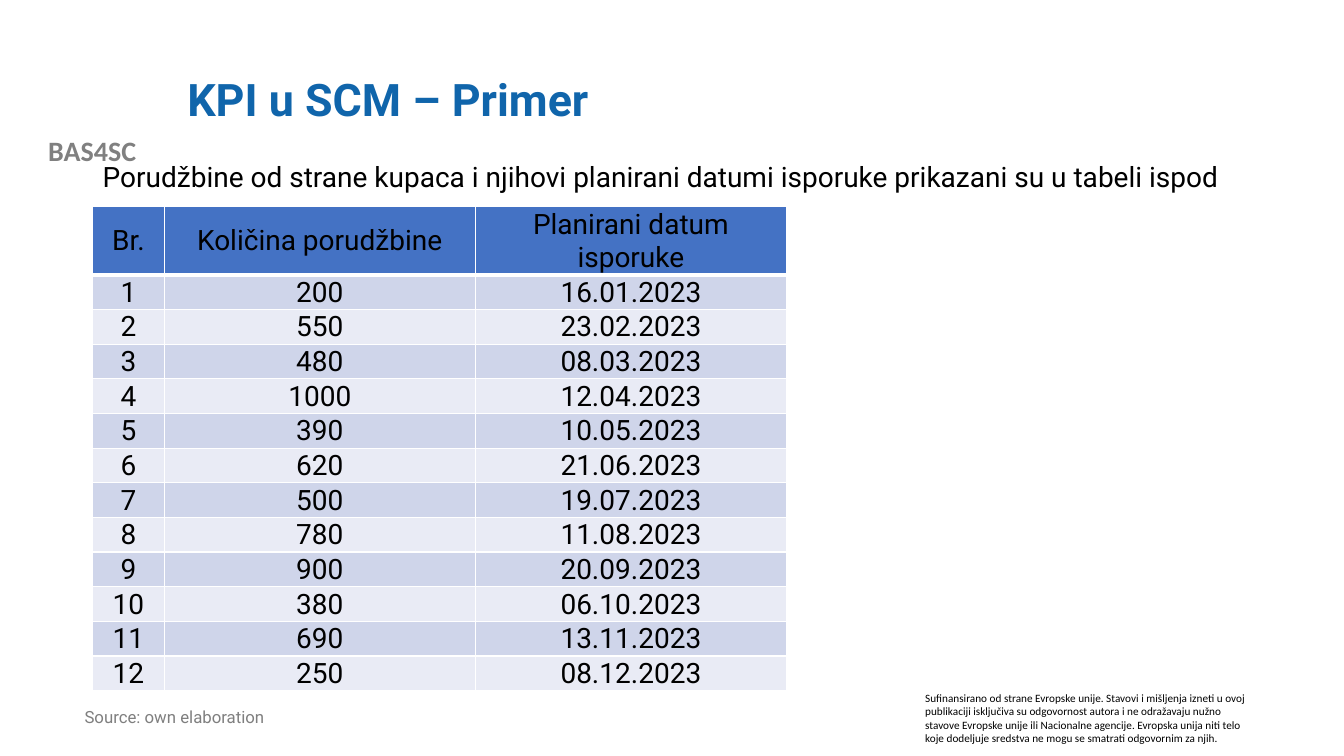
from lxml import etree
from pptx import Presentation
from pptx import util as u
from pptx.dml.color import RGBColor
from pptx.enum import text as t
from pptx.oxml import ns

# The slide is a grid of 160 columns and 90 rows of square units.
COLUMNS, ROWS = 160, 90
UNIT = u.Inches(1 / 12)

BLACK = RGBColor(0x00, 0x00, 0x00)
WHITE = RGBColor(0xFF, 0xFF, 0xFF)
TITLE_BLUE = RGBColor(0x10, 0x65, 0xAB)
LABEL_GREY = RGBColor(0x80, 0x80, 0x80)
SOURCE_GREY = RGBColor(0x7F, 0x7F, 0x7F)
HEADER_BLUE = RGBColor(0x44, 0x72, 0xC4)
BANDS = [RGBColor(0xCF, 0xD5, 0xEA), RGBColor(0xE9, 0xEB, 0xF5)]

PROJECT = "BAS4SC"
DISCLAIMER = (
    "Sufinansirano od strane Evropske unije. Stavovi i mišljenja izneti u ovoj "
    "publikaciji isključiva su odgovornost autora i ne odražavaju nužno stavove "
    "Evropske unije ili Nacionalne agencije. Evropska unija niti telo koje "
    "dodeljuje sredstva ne mogu se smatrati odgovornim za njih."
)
TITLE = "KPI u SCM – Primer"
INTRO = ("Porudžbine od strane kupaca i njihovi planirani datumi isporuke "
         "prikazani su u tabeli ispod")
SOURCE = "Source: own elaboration"
HEADER = ("Br.", "Količina porudžbine", "Planirani datum isporuke")
ORDERS = [
    (200, "16.01.2023"), (550, "23.02.2023"), (480, "08.03.2023"),
    (1000, "12.04.2023"), (390, "10.05.2023"), (620, "21.06.2023"),
    (500, "19.07.2023"), (780, "11.08.2023"), (900, "20.09.2023"),
    (380, "06.10.2023"), (690, "13.11.2023"), (250, "08.12.2023"),
]
COLUMN_WEIGHTS = (0.71, 3.09, 3.09)


def grid(*cells):
    """Turn grid units into slide lengths."""
    return [round(cell * UNIT) for cell in cells]


def set_attributes(target, **values):
    for name, value in values.items():
        setattr(target, name, value)


def format_font(font, size, color, name="Roboto", bold=False):
    set_attributes(font, size=u.Pt(size), name=name, bold=bold)
    font.color.rgb = color


def add_text(slide, box, words, font, frame_format=None, **paragraph_format):
    frame = slide.shapes.add_textbox(*grid(*box)).text_frame
    set_attributes(frame, word_wrap=True, **(frame_format or {}))
    paragraph = frame.paragraphs[0]
    paragraph.text = words
    set_attributes(paragraph, **paragraph_format)
    format_font(paragraph.runs[0].font, **font)


def add_borders(cell, **widths):
    """Draw white borders; widths are points by side, in the order L, R, T, B."""
    properties = cell._tc.get_or_add_tcPr()
    for side, width in widths.items():
        line = etree.SubElement(properties, ns.qn(f"a:ln{side}"), w=str(u.Pt(width)))
        fill = etree.SubElement(line, ns.qn("a:solidFill"))
        etree.SubElement(fill, ns.qn("a:srgbClr"), val=str(WHITE))


def add_orders_table(slide, box):
    rows = [HEADER] + [(number, *order) for number, order in enumerate(ORDERS, 1)]
    left, top, width, height = grid(*box)
    table = slide.shapes.add_table(
        len(rows), len(HEADER), left, top, width, height).table
    for column, weight in zip(table.columns, COLUMN_WEIGHTS):
        column.width = round(width * weight / sum(COLUMN_WEIGHTS))
    for row_index, row in enumerate(rows):
        fill = BANDS[(row_index - 1) % 2] if row_index else HEADER_BLUE
        for column_index, value in enumerate(row):
            cell = table.cell(row_index, column_index)
            add_borders(cell, L=1, R=1, T=3 if row_index == 1 else 1,
                        B=3 if row_index == 0 else 1)
            cell.fill.solid()
            cell.fill.fore_color.rgb = fill
            inset = u.Inches(0.01)
            set_attributes(cell, text=str(value), margin_left=inset,
                           margin_right=inset, margin_top=inset, margin_bottom=0,
                           vertical_anchor=t.MSO_ANCHOR.MIDDLE)
            paragraph = cell.text_frame.paragraphs[0]
            paragraph.alignment = t.PP_ALIGN.CENTER
            format_font(paragraph.runs[0].font, 20, BLACK)


def add_project_marks(slide, label_box, disclaimer_box):
    growing = {"auto_size": t.MSO_AUTO_SIZE.SHAPE_TO_FIT_TEXT}
    add_text(slide, label_box, PROJECT,
             {"size": 20, "color": LABEL_GREY, "name": "Calibri", "bold": True},
             growing, alignment=t.PP_ALIGN.CENTER)
    add_text(slide, disclaimer_box, DISCLAIMER,
             {"size": 8, "color": BLACK, "name": "Calibri"}, growing)


def add_heading(slide, title_box, intro_box):
    add_text(slide, title_box, TITLE, {"size": 32, "color": TITLE_BLUE, "bold": True},
             {"vertical_anchor": t.MSO_ANCHOR.MIDDLE}, line_spacing=0.9)
    add_text(slide, intro_box, INTRO, {"size": 20, "color": BLACK},
             alignment=t.PP_ALIGN.JUSTIFY, line_spacing=0.9)


def main():
    presentation = Presentation()
    set_attributes(presentation, slide_width=COLUMNS * UNIT, slide_height=ROWS * UNIT)
    slide = presentation.slides.add_slide(presentation.slide_layouts[6])
    add_project_marks(slide, (0, 15.36, 21.96, 5.28), (108.96, 81.72, 41.04, 7.68))
    add_heading(slide, (21.12, 4.8, 127.92, 14.64), (11.04, 18.84, 143.76, 13.68))
    add_text(slide, (8.88, 83.76, 60.12, 6.24), SOURCE,
             {"size": 12, "color": SOURCE_GREY}, line_spacing=0.9)
    add_orders_table(slide, (11.04, 24.6, 82.6, 43.68))
    presentation.save("out.pptx")


if __name__ == "__main__":
    main()
